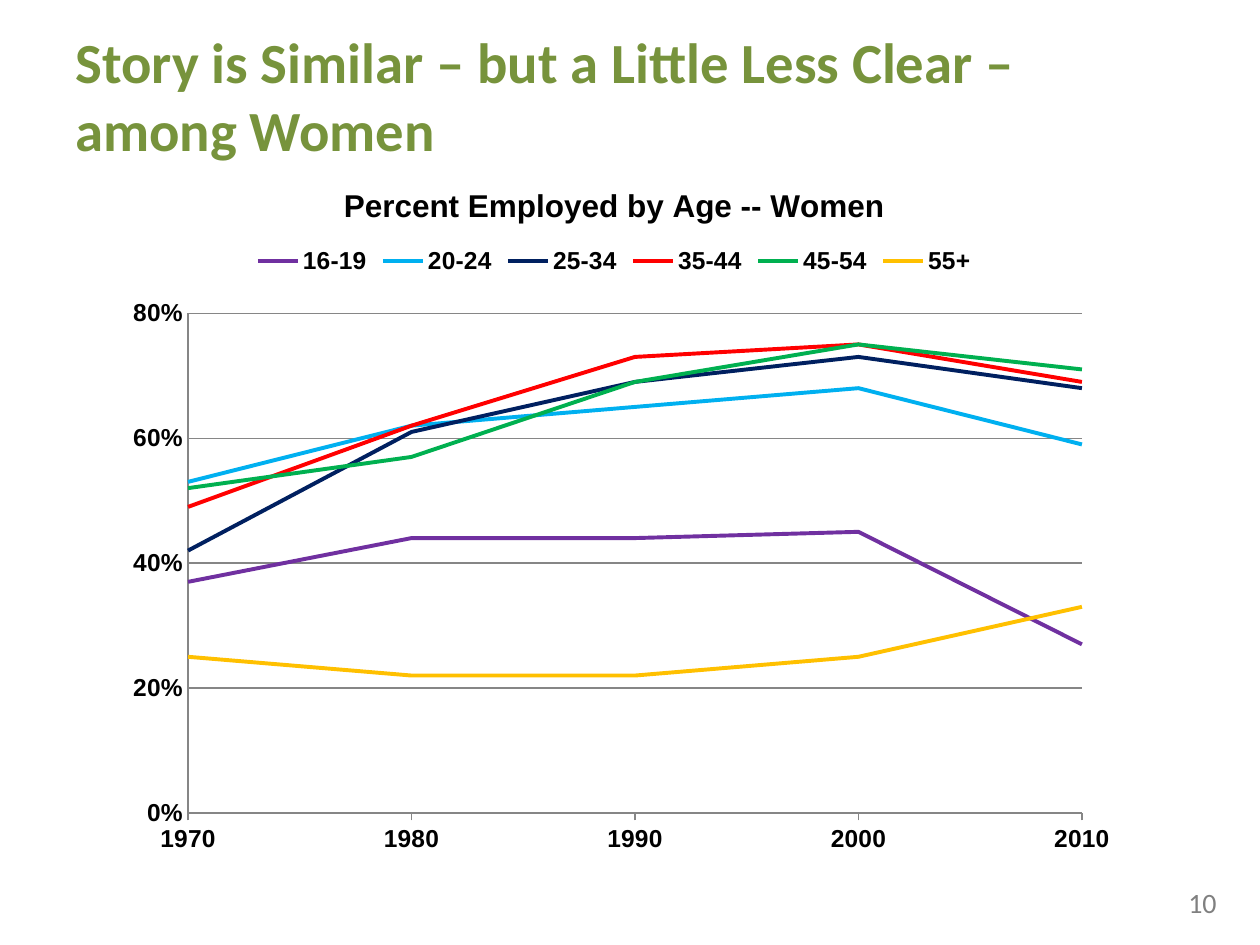
from dataclasses import dataclass

from lxml import etree
from pptx import Presentation
from pptx.chart.data import CategoryChartData
from pptx.dml.color import RGBColor
from pptx.enum.chart import XL_CHART_TYPE, XL_LEGEND_POSITION, XL_TICK_MARK
from pptx.enum.text import MSO_ANCHOR
from pptx.oxml.ns import qn
from pptx.util import Pt

LINE_CHART = XL_CHART_TYPE.LINE
LEGEND_TOP = XL_LEGEND_POSITION.TOP
TICK_NONE, TICK_OUTSIDE = XL_TICK_MARK.NONE, XL_TICK_MARK.OUTSIDE
ANCHOR_TOP, ANCHOR_MIDDLE = MSO_ANCHOR.TOP, MSO_ANCHOR.MIDDLE


@dataclass(frozen=True)
class Theme:
    heading_font: str = "Calibri"
    chart_font: str = "Arial"
    heading_color: str = "77933C"
    number_color: str = "808080"
    text_color: str = "000000"
    grid_color: str = "868686"
    heading_size: float = 32.4
    number_size: float = 16
    chart_title_size: float = 18
    label_size: float = 14
    series_width: float = 2.25
    grid_width: float = 0.75


THEME = Theme()
YEARS = ["1970", "1980", "1990", "2000", "2010"]
EMPLOYMENT_BY_AGE = [
    ("16-19", "7030A0", (0.37, 0.44, 0.44, 0.45, 0.27)),
    ("20-24", "00B0F0", (0.53, 0.62, 0.65, 0.68, 0.59)),
    ("25-34", "002060", (0.42, 0.61, 0.69, 0.73, 0.68)),
    ("35-44", "FF0000", (0.49, 0.62, 0.73, 0.75, 0.69)),
    ("45-54", "00B050", (0.52, 0.57, 0.69, 0.75, 0.71)),
    ("55+", "FFC000", (0.25, 0.22, 0.22, 0.25, 0.33)),
]
PLOT_LAYOUT = {"x": 0.09, "y": 0.215, "w": 0.86, "h": 0.69}


def set_attributes(target, values):
    for name, value in values.items():
        setattr(target, name, value)


def format_font(font, name, size, color, bold):
    set_attributes(font, {"name": name, "size": Pt(size), "bold": bold})
    font.color.rgb = RGBColor.from_string(color)


def format_line(line, color, width):
    line.color.rgb = RGBColor.from_string(color)
    line.width = Pt(width)


def add_text(slide, text, box, size, color, bold=False, anchor=ANCHOR_TOP):
    shape = slide.shapes.add_textbox(*map(Pt, box))
    frame = shape.text_frame
    set_attributes(frame, {"word_wrap": True, "vertical_anchor": anchor})
    paragraph = frame.paragraphs[0]
    paragraph.text = text
    format_font(paragraph.runs[0].font, THEME.heading_font, size, color, bold)


def set_plot_layout(chart, fractions):
    """Fix the inner plot area as fractions of the chart frame."""
    plot_area = chart._chartSpace.chart.plotArea
    for old_layout in plot_area.findall(qn("c:layout")):
        plot_area.remove(old_layout)
    layout = etree.Element(qn("c:layout"))
    manual = etree.SubElement(layout, qn("c:manualLayout"))
    settings = {"layoutTarget": "inner", "xMode": "edge", "yMode": "edge", **fractions}
    for name, value in settings.items():
        etree.SubElement(manual, qn(f"c:{name}")).set("val", str(value))
    plot_area.insert(0, layout)


def format_axes(chart):
    category_axis, value_axis = chart.category_axis, chart.value_axis
    set_attributes(category_axis, {"major_tick_mark": TICK_OUTSIDE,
                                   "minor_tick_mark": TICK_NONE})
    set_attributes(value_axis, {"major_tick_mark": TICK_NONE,
                                "minor_tick_mark": TICK_NONE,
                                "minimum_scale": 0, "maximum_scale": 0.8,
                                "major_unit": 0.2, "has_major_gridlines": True})
    set_attributes(value_axis.tick_labels, {"number_format": "0%",
                                            "number_format_is_linked": False})
    for part in (category_axis, value_axis, value_axis.major_gridlines):
        format_line(part.format.line, THEME.grid_color, THEME.grid_width)
    for part in (category_axis.tick_labels, value_axis.tick_labels):
        format_font(part.font, THEME.chart_font, THEME.label_size,
                    THEME.text_color, True)
    # The lines start on the value axis rather than half a category in.
    crossing = value_axis._element.find(qn("c:crossBetween"))
    if crossing is None:
        crossing = etree.Element(qn("c:crossBetween"))
        value_axis._element.find(qn("c:majorUnit")).addprevious(crossing)
    crossing.set("val", "midCat")


def add_line_chart(slide, title, box):
    data = CategoryChartData(number_format="0%")
    data.categories = YEARS
    for age, _, values in EMPLOYMENT_BY_AGE:
        data.add_series(age, values)
    chart = slide.shapes.add_chart(LINE_CHART, *map(Pt, box), data).chart
    set_attributes(chart, {"has_title": True, "has_legend": True})

    chart.chart_title.include_in_layout = False
    title_frame = chart.chart_title.text_frame
    title_frame.text = title
    format_font(title_frame.paragraphs[0].runs[0].font, THEME.chart_font,
                THEME.chart_title_size, THEME.text_color, True)

    set_attributes(chart.legend, {"position": LEGEND_TOP, "include_in_layout": False})
    format_font(chart.legend.font, THEME.chart_font, THEME.label_size,
                THEME.text_color, True)

    chart.plots[0].vary_by_categories = False
    for series, (_, color, _) in zip(chart.plots[0].series, EMPLOYMENT_BY_AGE):
        series.smooth = False
        format_line(series.format.line, color, THEME.series_width)
    format_axes(chart)
    set_plot_layout(chart, PLOT_LAYOUT)


def main():
    presentation = Presentation()
    set_attributes(presentation, {"slide_width": Pt(720), "slide_height": Pt(540)})
    slide = presentation.slides.add_slide(presentation.slide_layouts[6])
    add_text(slide, "10", (672, 502.5, 36, 27), THEME.number_size, THEME.number_color)
    add_text(slide, "Story is Similar – but a Little Less Clear – among Women",
             (36, 18, 648, 72), THEME.heading_size, THEME.heading_color,
             bold=True, anchor=ANCHOR_MIDDLE)
    add_line_chart(slide, "Percent Employed by Age -- Women", (54, 90, 594, 414))
    presentation.save("out.pptx")


if __name__ == "__main__":
    main()
